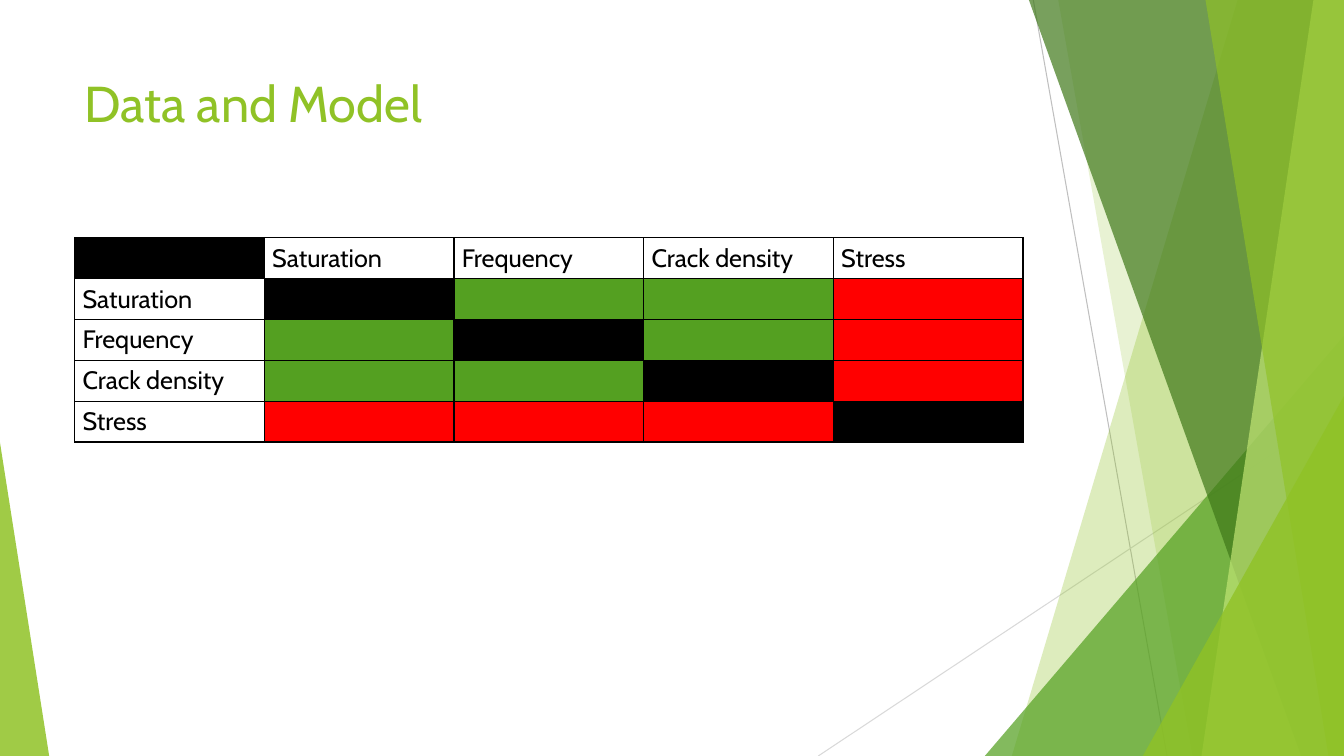
from dataclasses import dataclass

from lxml import etree
from pptx import Presentation
from pptx.dml import color as c
from pptx.enum import shapes, text
from pptx.oxml import ns
from pptx.util import Cm, Pt

WIDTH, HEIGHT = 33.87, 19.05
FONT = "Cabin"
LIME = c.RGBColor(0x90, 0xC2, 0x26)
PALE_LIME = c.RGBColor(0xC0, 0xE4, 0x74)
GREEN = c.RGBColor(0x54, 0xA0, 0x21)
DARK_GREEN = c.RGBColor(0x3F, 0x78, 0x19)
RED = c.RGBColor(0xFF, 0x00, 0x00)
BLACK = c.RGBColor(0x00, 0x00, 0x00)
GREY = c.RGBColor(0xBF, 0xBF, 0xBF)
LIGHT_GREY = c.RGBColor(0xD9, 0xD9, 0xD9)


@dataclass
class Ray:
    x1: float
    y1: float
    x2: float
    y2: float
    color: c.RGBColor


@dataclass
class Facet:
    top_x: float
    bottom_x: float
    color: c.RGBColor
    opacity: int


@dataclass
class Wedge:
    left: float
    top: float
    width: float
    apex: float
    color: c.RGBColor
    opacity: int


RAYS = [
    Ray(26.04, 0, 29.41, HEIGHT, GREY),
    Ray(WIDTH, 10.24, 20.62, HEIGHT, LIGHT_GREY),
]
PANES = [
    Facet(31.19, 25.5, LIME, 30),
    Facet(26.67, 30.05, LIME, 20),
    Wedge(24.82, 8.46, 9.05, 1, GREEN, 72),
    Facet(25.93, 32.79, DARK_GREEN, 70),
    Facet(33.1, 30.28, PALE_LIME, 70),
    Facet(30.38, 33.48, LIME, 65),
    Wedge(28.8, 9.98, 5.07, 1, LIME, 80),
    Wedge(0, 11.15, 1.24, 0, LIME, 85),
]
FACTORS = ["Saturation", "Frequency", "Crack density", "Stress"]
COLUMN, ROW = 4.78, 1.03


def draw_ray(s, ray: Ray) -> None:
    line = s.shapes.add_connector(
        shapes.MSO_CONNECTOR.STRAIGHT, Cm(ray.x1), Cm(ray.y1), Cm(ray.x2), Cm(ray.y2)
    )
    line.line.color.rgb = ray.color
    line.line.width = Pt(0.75)
    etree.SubElement(line._element.spPr, ns.qn("a:effectLst"))


def draw_pane(s, pane: Facet | Wedge) -> None:
    if isinstance(pane, Facet):
        builder = s.shapes.build_freeform(Cm(pane.top_x), 0)
        corners = [(WIDTH, 0), (WIDTH, HEIGHT), (pane.bottom_x, HEIGHT)]
        builder.add_line_segments([(Cm(x), Cm(y)) for x, y in corners])
        sp = builder.convert_to_shape()
    else:
        sp = s.shapes.add_shape(
            shapes.MSO_SHAPE.ISOSCELES_TRIANGLE,
            Cm(pane.left), Cm(pane.top), Cm(pane.width), Cm(HEIGHT - pane.top),
        )
        sp.adjustments[0] = pane.apex
    sp.shadow.inherit = False
    sp.line.fill.background()
    sp.fill.solid()
    sp.fill.fore_color.rgb = pane.color
    color = sp._element.spPr.find(".//" + ns.qn("a:srgbClr"))
    etree.SubElement(color, ns.qn("a:alpha"), val=str(pane.opacity * 1000))


def style_run(p, size: int, color: c.RGBColor) -> None:
    for r in p.runs:
        r.font.name = FONT
        r.font.size = Pt(size)
        r.font.color.rgb = color


def draw_title(s, title: str) -> None:
    tf = s.shapes.add_textbox(Cm(1.88), Cm(1.7), Cm(23.88), Cm(3.66)).text_frame
    tf.word_wrap = True
    tf.vertical_anchor = text.MSO_ANCHOR.TOP
    tf.text = title
    style_run(tf.paragraphs[0], 36, LIME)


def add_borders(cell) -> None:
    properties = cell._tc.get_or_add_tcPr()
    for side in ("lnL", "lnR", "lnT", "lnB"):
        border = etree.SubElement(properties, ns.qn(f"a:{side}"), w=str(Pt(1)))
        fill = etree.SubElement(border, ns.qn("a:solidFill"))
        etree.SubElement(fill, ns.qn("a:srgbClr"), val=str(BLACK))


def cell_color(row: int, column: int) -> c.RGBColor:
    if row == column:
        return BLACK
    return RED if len(FACTORS) in (row, column) else GREEN


def draw_matrix(s) -> None:
    n = len(FACTORS) + 1
    table = s.shapes.add_table(
        n, n, Cm(1.88), Cm(5.99), Cm(n * COLUMN), Cm(n * ROW)
    ).table
    table.first_row = False
    table.horz_banding = False
    labels = [""] + FACTORS
    for i in range(n):
        table.columns[i].width = Cm(COLUMN)
        table.rows[i].height = Cm(ROW)
        for j in range(n):
            cell = table.cell(i, j)
            cell.margin_left = cell.margin_right = Cm(0.2)
            cell.margin_top = cell.margin_bottom = Cm(0.13)
            add_borders(cell)
            if i != j and 0 in (i, j):
                cell.fill.background()
                cell.text_frame.text = labels[i + j]
                style_run(cell.text_frame.paragraphs[0], 18, BLACK)
            else:
                cell.fill.solid()
                cell.fill.fore_color.rgb = cell_color(i, j)


def main() -> None:
    prs = Presentation()
    prs.slide_width, prs.slide_height = Cm(WIDTH), Cm(HEIGHT)
    s = prs.slides.add_slide(prs.slide_layouts[6])
    for ray in RAYS:
        draw_ray(s, ray)
    for pane in PANES:
        draw_pane(s, pane)
    draw_title(s, "Data and Model")
    draw_matrix(s)
    prs.save("out.pptx")


if __name__ == "__main__":
    main()
